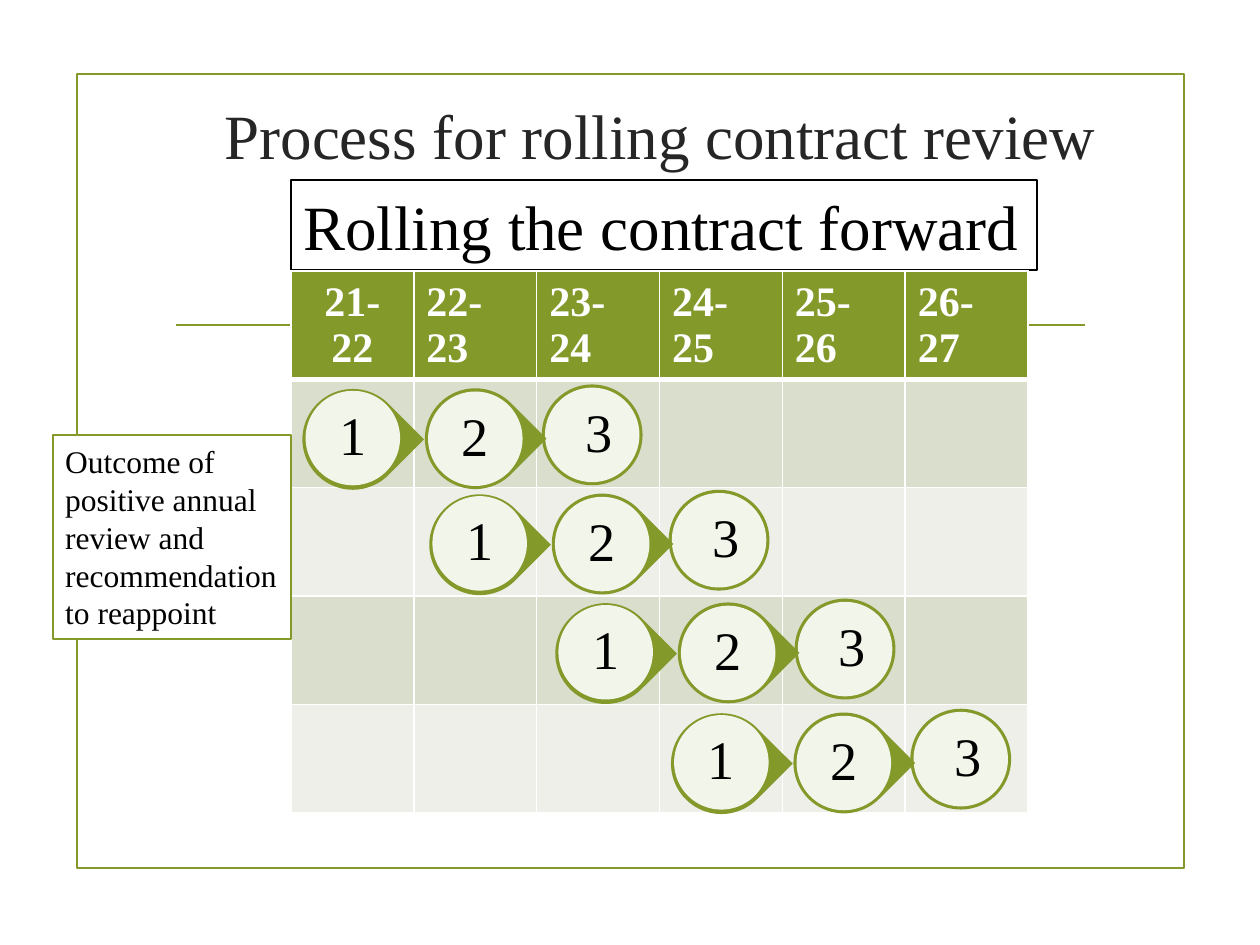
from lxml import etree
from pptx import Presentation
from pptx.dml.color import RGBColor
from pptx.enum import shapes, text
from pptx.oxml import ns
from pptx.util import Pt

FONT = "Times New Roman"
COLORS = {
    "green": "83992A", "white": "FFFFFF", "black": "000000", "title": "262626",
    "dark band": "D9DECD", "light band": "EDEFE8",
}
COLORS = {name: RGBColor.from_string(value) for name, value in COLORS.items()}
SHAPE = shapes.MSO_SHAPE


def add_shape(parent, kind, left, top, width, height, fill=None, line=None):
    shape = parent.shapes.add_shape(kind, Pt(left), Pt(top), Pt(width), Pt(height))
    shape.shadow.inherit = False
    if fill:
        shape.fill.solid()
        shape.fill.fore_color.rgb = COLORS[fill]
    else:
        shape.fill.background()
    if line:
        shape.line.color.rgb = COLORS[line]
        shape.line.width = Pt(1.25)
    else:
        shape.line.fill.background()
    return shape


def write(frame, words, size, color, align=text.PP_ALIGN.LEFT):
    para = frame.paragraphs[0]
    para.text = words
    para.alignment = align
    para.font.name = FONT
    para.font.size = Pt(size)
    para.font.color.rgb = COLORS[color]
    frame.vertical_anchor = text.MSO_ANCHOR.MIDDLE
    return para


deck = Presentation()
deck.slide_width, deck.slide_height = Pt(720), Pt(540)
page = deck.slides.add_slide(deck.slide_layouts[5])

# Page frame and rule
add_shape(page, SHAPE.RECTANGLE, 43.9, 42.5, 632.9, 453.6, line="green")
rule = page.shapes.add_connector(
    shapes.MSO_CONNECTOR.STRAIGHT, Pt(100.8), Pt(185.8), Pt(619.9), Pt(185.8))
rule.line.color.rgb = COLORS["green"]
rule.line.width = Pt(1.25)
etree.SubElement(rule._element.spPr, ns.qn("a:effectLst"))

# Title and subtitle
title = page.shapes.title
title.left, title.top, title.width, title.height = Pt(109.4), Pt(25.2), Pt(535.7), Pt(103)
write(title.text_frame, "Process for rolling contract review", 36, "title",
      text.PP_ALIGN.CENTER)
subtitle = add_shape(page, SHAPE.RECTANGLE, 166.3, 103, 426.2, 51.1, "white", "black")
subtitle.text_frame.word_wrap = False
write(subtitle.text_frame, "Rolling the contract forward", 36, "black")

# Table of contract years
years = ["21-22", "22-23", "23-24", "24-25", "25-26", "26-27"]
row_count = 5
table = page.shapes.add_table(
    row_count, len(years), Pt(166.3), Pt(154.8), Pt(421.2), Pt(309.6)).table
for row in range(row_count):
    for col, year in enumerate(years):
        cell = table.cell(row, col)
        cell.fill.solid()
        if row == 0:
            fill = "green"
            align = text.PP_ALIGN.LEFT if col else text.PP_ALIGN.CENTER
            write(cell.text_frame, year, 24, "white", align).font.bold = True
            cell.vertical_anchor = text.MSO_ANCHOR.MIDDLE
        else:
            fill = "dark band" if row % 2 else "light band"
        cell.fill.fore_color.rgb = COLORS[fill]
        for place, side in enumerate(["lnL", "lnR", "lnT", "lnB"]):
            under_header = (row, side) in [(0, "lnB"), (1, "lnT")]
            border = etree.Element(ns.qn(f"a:{side}"), w=str(Pt(3 if under_header else 1)))
            paint = etree.SubElement(border, ns.qn("a:solidFill"))
            etree.SubElement(paint, ns.qn("a:srgbClr"), val=str(COLORS["white"]))
            cell._tc.get_or_add_tcPr().insert(place, border)

# Three-year contracts, each one starting a year later
DISC, INNER = 57.6, 54
STEPS = [("\u00203", 136.8, -2.6, 0), ("2", 70, -0.4, 45), ("1", 0, 0, 45)]
starts = [(172.8, 222.3), (245.3, 282.5), (317.3, 344.7), (383.4, 407.6)]
for left, top in starts:
    contract = page.shapes.add_group_shape()
    for label, across, down, turn in STEPS:
        kind = SHAPE.TEAR if turn else SHAPE.OVAL
        marker = add_shape(contract, kind, left + across, top + down, DISC, DISC, "green")
        marker.rotation = turn
        edge = (DISC - INNER) / 2
        disc = add_shape(contract, SHAPE.OVAL, left + across + edge,
                         top + down + (edge if label != "1" else 1), INNER, INNER, "white")
        color = disc.fill._xPr.find(f".//{ns.qn('a:srgbClr')}")
        etree.SubElement(color, ns.qn("a:alpha"), val="90000")
        frame = disc.text_frame
        frame.margin_left = frame.margin_right = Pt(2.9)
        frame.margin_top = frame.margin_bottom = Pt(2.9)
        write(frame, label, 31, "black", text.PP_ALIGN.CENTER).line_spacing = 0.9

# Outcome note
note = add_shape(page, SHAPE.RECTANGLE, 30.2, 248.4, 136.1, 116.6, "white", "green")
note.text_frame.word_wrap = True
write(note.text_frame,
      "Outcome of positive annual review and recommendation to reappoint", 18, "black")

deck.save("out.pptx")
